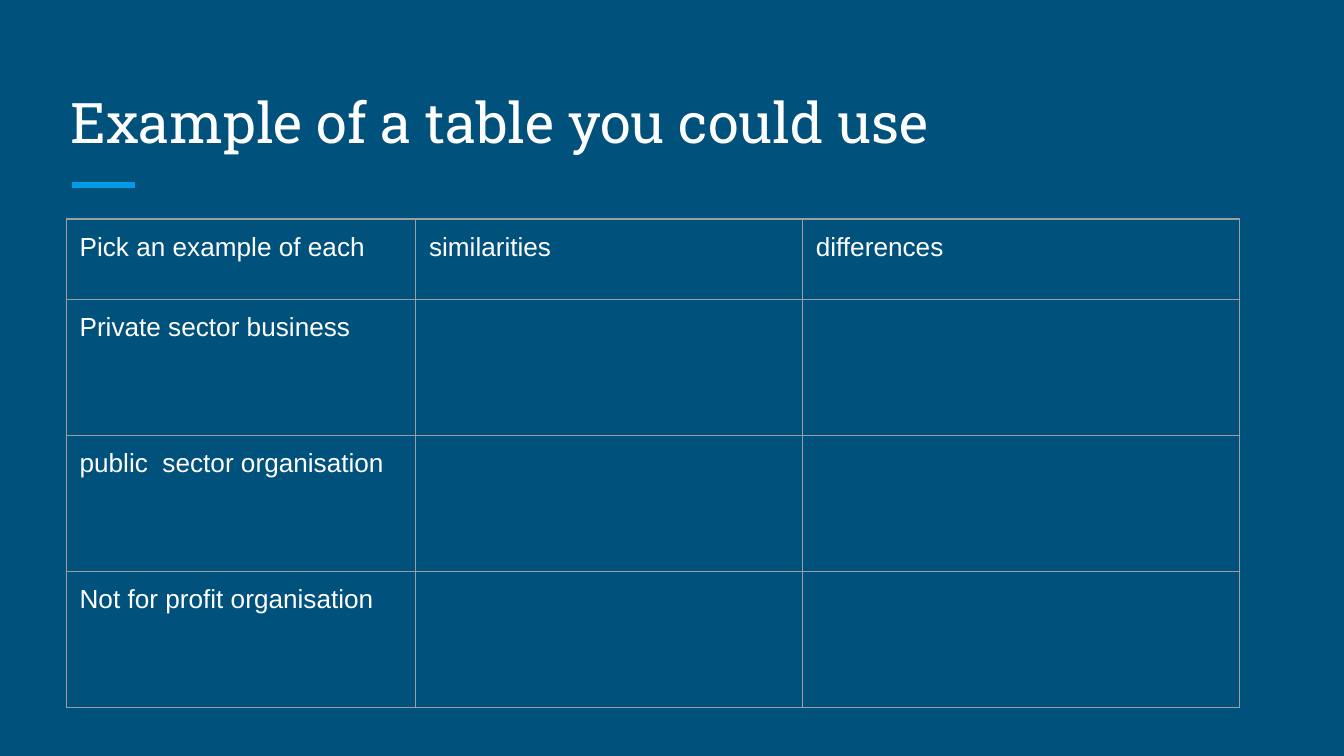
from lxml.etree import SubElement
from pptx import Presentation
from pptx.dml.color import RGBColor
from pptx.enum.shapes import MSO_CONNECTOR
from pptx.enum.text import MSO_ANCHOR
from pptx.oxml.ns import qn
from pptx.util import Inches, Pt

COLS, ROWS = 100, 56.25


def cell_size(count):
    return Inches(count / 10)


def tint(code):
    return RGBColor.from_string(code)


class Deck:
    back, ink, bar, rule = "00517C", "FFFFFF", "039BE5", "9E9E9E"
    head, body = "Roboto Slab", "Arial"
    pad = cell_size(1)

    def __init__(self):
        self.show = Presentation()
        self.show.slide_width = cell_size(COLS)
        self.show.slide_height = cell_size(ROWS)
        self.slide = self.show.slides.add_slide(self.show.slide_layouts[6])
        fill = self.slide.background.fill
        fill.solid()
        fill.fore_color.rgb = tint(self.back)

    def style(self, frame, text, face, size):
        frame.text = text
        frame.word_wrap = True
        for run in frame.paragraphs[0].runs:
            run.font.name = face
            run.font.size = Pt(size)
            run.font.color.rgb = tint(self.ink)

    def inset(self, item):
        item.margin_left = item.margin_right = self.pad
        item.margin_top = item.margin_bottom = self.pad

    def title(self, text, *box):
        frame = self.slide.shapes.add_textbox(*map(cell_size, box)).text_frame
        self.style(frame, text, self.head, 30)
        self.inset(frame)
        frame.vertical_anchor = MSO_ANCHOR.BOTTOM

    def line(self, left, right, top):
        ends = map(cell_size, (left, top, right, top))
        line = self.slide.shapes.add_connector(MSO_CONNECTOR.STRAIGHT, *ends)
        line.line.color.rgb = tint(self.bar)
        line.line.width = Pt(3)
        SubElement(line._element.spPr, qn("a:effectLst"))

    def border(self, cell):
        props = cell._tc.get_or_add_tcPr()
        for at, side in enumerate(("lnL", "lnR", "lnT", "lnB")):
            edge = SubElement(props, qn(f"a:{side}"), w=str(Pt(0.75)))
            fill = SubElement(edge, qn("a:solidFill"))
            SubElement(fill, qn("a:srgbClr"), val=self.rule)
            props.insert(at, edge)

    def table(self, left, top, wide, high, data):
        box = map(cell_size, (left, top, sum(wide), sum(high)))
        grid = self.slide.shapes.add_table(len(high), len(wide), *box).table
        grid.first_row = grid.horz_banding = False
        for col, width in zip(grid.columns, wide):
            col.width = cell_size(width)
        for row, height, texts in zip(grid.rows, high, data):
            row.height = cell_size(height)
            for cell, text in zip(row.cells, texts):
                self.style(cell.text_frame, text, self.body, 14)
                self.inset(cell)
                cell.fill.background()
                self.border(cell)


def main():
    deck = Deck()
    deck.line(5.37, 10.03, 13.78)
    deck.title("Example of a table you could use", 4.25, 5, 91.5, 7.5)
    kinds = ("Private sector business", "public  sector organisation",
             "Not for profit organisation")
    data = [("Pick an example of each", "similarities", "differences")]
    data += [(kind, "", "") for kind in kinds]
    deck.table(4.92, 16.3, (26, 28.78, 32.5), [6] + [10.12] * len(kinds), data)
    deck.show.save("out.pptx")


if __name__ == "__main__":
    main()
